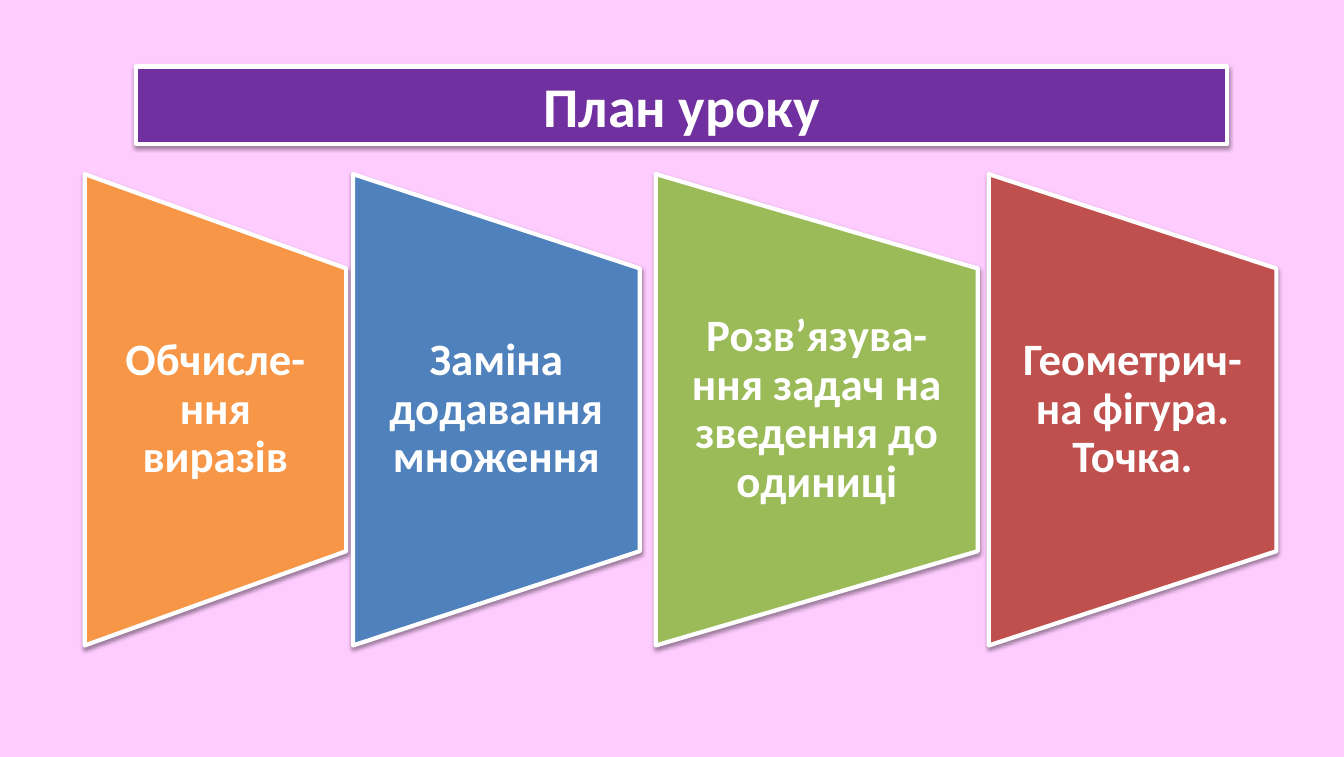
from lxml import etree
from pptx import Presentation, util as u
from pptx.dml.color import RGBColor
from pptx.enum import shapes, text
from pptx.oxml.ns import qn

SLIDE_W, SLIDE_H = 13.32, 7.5
COLORS = {
    "background": "FFCCFF", "title": "7030A0", "white": "FFFFFF", "shadow": "000000",
    "orange": "F79646", "blue": "4F81BD", "green": "9BBB59", "red": "C0504D",
}
TITLE = "План уроку"
TITLE_BOX = (1.35, 0.66, 10.81, 0.77)
# wording, colour, left edge, width
STAGES = [
    ("Обчисле-ння виразів", "orange", 0.84, 2.59),
    ("Геометрич-на фігура. Точка.", "red", 9.8, 2.85),
    ("Розв’язува-ння задач на зведення до одиниці", "green", 6.5, 3.19),
    ("Заміна додавання множення", "blue", 3.5, 2.84),
]
PANEL_H, PANEL_MIDDLE = 4.67, 4.06
LABEL_H = PANEL_H * 0.6
LABEL_FRAME = {
    "word_wrap": True, "vertical_anchor": text.MSO_ANCHOR.MIDDLE,
    "margin_left": u.Inches(0.22), "margin_right": u.Inches(0.22),
    "margin_top": 0, "margin_bottom": 0,
}


def rgb(name):
    return RGBColor.from_string(COLORS[name])


def apply(target, values):
    for key, value in values.items():
        setattr(target, key, value)


def inches(box):
    return [u.Inches(length) for length in box]


def add_block(slide, kind, box, color):
    """Add a filled shape with a white outline and a soft shadow below it."""
    block = slide.shapes.add_shape(kind, *inches(box))
    block.fill.solid()
    block.fill.fore_color.rgb = rgb(color)
    block.line.color.rgb = rgb("white")
    block.line.width = u.Pt(3)
    block.shadow.inherit = False
    effects = block._element.spPr.find(qn("a:effectLst"))
    shadow = etree.SubElement(
        effects, qn("a:outerShdw"), blurRad=str(u.Pt(3.1)), dist=str(u.Pt(1.6)),
        dir="5400000", rotWithShape="0")
    shade = etree.SubElement(shadow, qn("a:srgbClr"), val=COLORS["shadow"])
    etree.SubElement(shade, qn("a:alpha"), val="38000")
    return block


def write(frame, words, size, spacing=1.0):
    paragraph = frame.paragraphs[0]
    apply(paragraph, {"alignment": text.PP_ALIGN.CENTER, "line_spacing": spacing})
    run = paragraph.add_run()
    run.text = words
    apply(run.font, {"name": "Calibri", "size": u.Pt(size), "bold": True})
    run.font.color.rgb = rgb("white")


def add_stage(slide, words, color, left, width):
    """Add a trapezoid turned a quarter to the left, with an upright label on it."""
    center = left + width / 2
    unturned = (center - PANEL_H / 2, PANEL_MIDDLE - width / 2, PANEL_H, width)
    panel = add_block(
        slide, shapes.MSO_SHAPE.FLOWCHART_MANUAL_OPERATION, unturned, color)
    panel.rotation = 270
    label = slide.shapes.add_textbox(
        *inches((left, PANEL_MIDDLE - LABEL_H / 2, width, LABEL_H)))
    apply(label.text_frame, LABEL_FRAME)
    write(label.text_frame, words, 32, 0.9)


def main():
    deck = Presentation()
    apply(deck, {"slide_width": u.Inches(SLIDE_W), "slide_height": u.Inches(SLIDE_H)})
    slide = deck.slides.add_slide(deck.slide_layouts[6])
    slide.background.fill.solid()
    slide.background.fill.fore_color.rgb = rgb("background")

    title = add_block(slide, shapes.MSO_SHAPE.RECTANGLE, TITLE_BOX, "title")
    apply(title.text_frame, {
        "word_wrap": True, "vertical_anchor": text.MSO_ANCHOR.TOP})
    write(title.text_frame, TITLE, 40)
    for stage in STAGES:
        add_stage(slide, *stage)
    deck.save("out.pptx")


if __name__ == "__main__":
    main()
